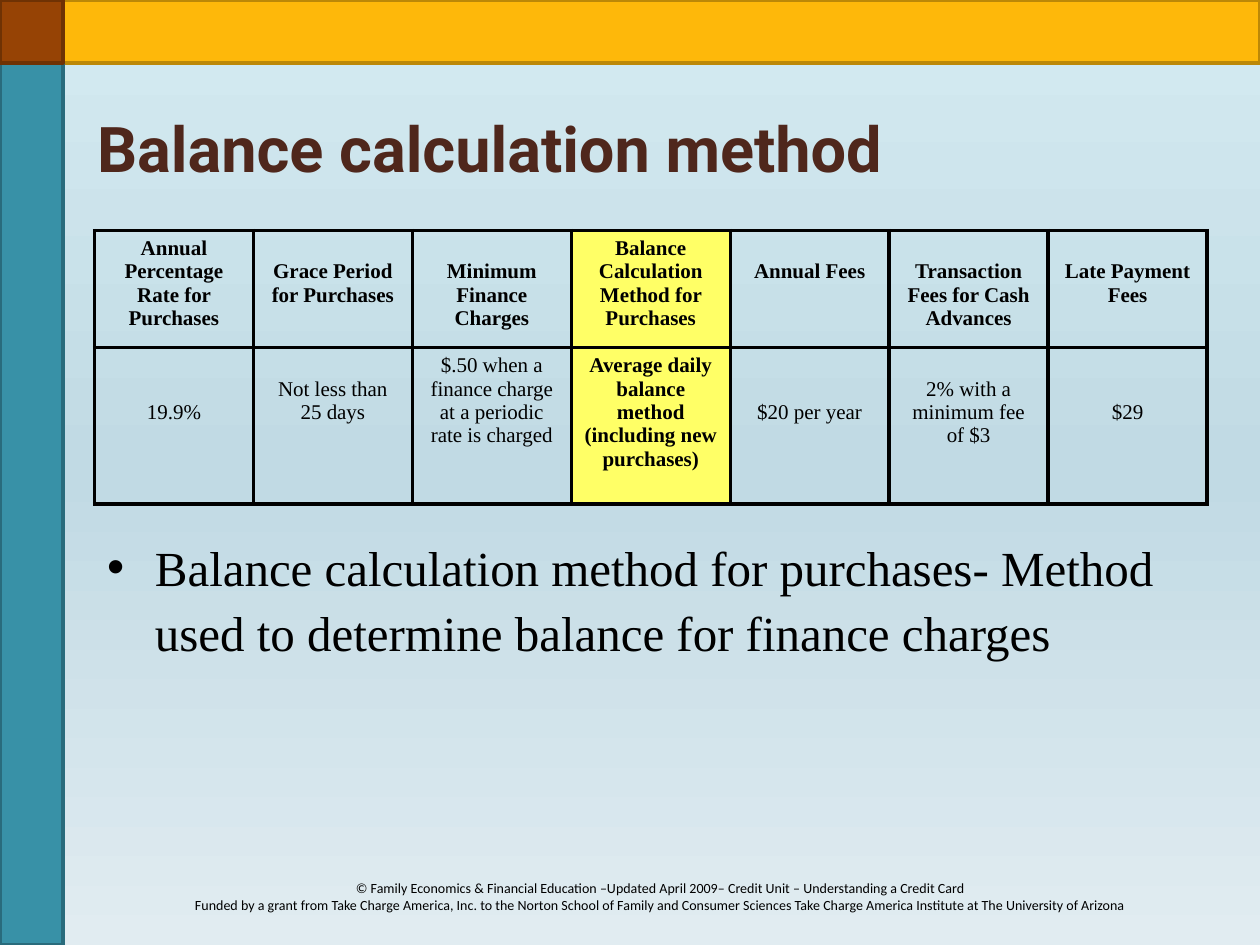
from copy import deepcopy

from lxml.etree import SubElement
from pptx import Presentation
from pptx.dml.color import RGBColor
from pptx.enum.shapes import MSO_SHAPE as Shape
from pptx.enum.text import MSO_ANCHOR as Anchor, PP_ALIGN as Align
from pptx.oxml.ns import qn
from pptx.util import Inches, Pt

BLACK = RGBColor(0x00, 0x00, 0x00)
BROWN = RGBColor(0x4F, 0x27, 0x1C)
YELLOW = RGBColor(0xFF, 0xFF, 0x66)
GOLD, GOLD_EDGE = RGBColor(0xFE, 0xB8, 0x0A), RGBColor(0xBC, 0x88, 0x07)
TEAL, TEAL_EDGE = RGBColor(0x38, 0x91, 0xA7), RGBColor(0x29, 0x6B, 0x7C)
RUST, RUST_EDGE = RGBColor(0x96, 0x43, 0x05), RGBColor(0x6F, 0x32, 0x04)
SKY = (RGBColor(0xD4, 0xEB, 0xF1), RGBColor(0xC1, 0xDA, 0xE4), RGBColor(0xE1, 0xEC, 0xF1))

WIDTH, HEIGHT, BAND = 10, 7.5, 0.5
LEFT, CONTENT_WIDTH = 0.75, 8.83
CELL_MARGIN, CELL_LINE = 0.05, 0.185
ROW_HEIGHTS = (0.93, 1.24)
HIGHLIGHT_COLUMN = 3
SERIF = "Times New Roman"

TERMS = (
    ((0, "Annual Percentage Rate for Purchases"), (2, "19.9%")),
    ((1, "Grace Period for Purchases"), (1, "Not less than\n25 days")),
    ((1, "Minimum Finance Charges"),
     (0, "$.50 when a finance charge at a periodic rate is charged")),
    ((0, "Balance Calculation Method for Purchases"),
     (0, "Average daily balance method (including new purchases)")),
    ((1, "Annual Fees"), (2, "$20 per year")),
    ((1, "Transaction Fees for Cash Advances"), (1, "2% with a minimum fee of $3")),
    ((1, "Late Payment Fees"), (2, "$29")),
)
CREDITS = (
    "© Family Economics & Financial Education –Updated April 2009– Credit Unit – "
    "Understanding a Credit Card\n"
    "Funded by a grant from Take Charge America, Inc. to the Norton School of Family and "
    "Consumer Sciences Take Charge America Institute at The University of Arizona"
)


def format_text(frame, font_name, size, color, align, bold=False):
    """Give every paragraph of a text frame the same look."""
    for para in frame.paragraphs:
        para.alignment = align
        font = para.font
        font.name, font.size, font.bold = font_name, Pt(size), bold
        font.color.rgb = color


def place(shape, left, top, width, height):
    """Move and size a shape in inches."""
    shape.left, shape.top = Inches(left), Inches(top)
    shape.width, shape.height = Inches(width), Inches(height)


def paint_background(page):
    """Fill the page with a vertical three-colour gradient."""
    fill = page.background.fill
    fill.gradient()
    fill.gradient_angle = 270
    stop_list = next(page.background._cSld.iter(qn("a:gsLst")))
    stop_list.append(deepcopy(stop_list[0]))
    for index, (stop, color) in enumerate(zip(fill.gradient_stops, SKY)):
        stop.position = index / 2
        stop.color.rgb = color


def add_band(page, width, height, color, edge):
    """Draw a bordered rectangle from the top left corner."""
    band = page.shapes.add_shape(Shape.RECTANGLE, 0, 0, Inches(width), Inches(height))
    band.shadow.inherit = False
    band.fill.solid()
    band.fill.fore_color.rgb = color
    band.line.color.rgb = edge
    band.line.width = Pt(2)


def add_title(page, text):
    """Fill the title placeholder."""
    title = page.shapes.title
    place(title, 0.67, 0.67, 8.92, 1)
    title.text_frame.text = text
    title.text_frame.vertical_anchor = Anchor.MIDDLE
    format_text(title.text_frame, "Roboto", 36, BROWN, Align.LEFT, bold=True)


def add_bullet(page, text):
    """Fill the body placeholder with one bulleted paragraph."""
    body = page.placeholders[1]
    place(body, LEFT, 4.17, CONTENT_WIDTH, 2.17)
    body.text_frame.text = text
    para = body.text_frame.paragraphs[0]
    para.space_before = Pt(0)
    para.line_spacing = 1.1
    settings = para._p.get_or_add_pPr()
    settings.set("marL", str(Inches(0.38)))
    settings.set("indent", str(-Inches(0.38)))
    SubElement(settings, qn("a:buChar")).set("char", "•")
    format_text(body.text_frame, SERIF, 28, BLACK, Align.LEFT)


def add_borders(cell):
    """Draw black lines on all four sides of a cell."""
    settings = cell._tc.get_or_add_tcPr()
    for side in ("a:lnL", "a:lnR", "a:lnT", "a:lnB"):
        line = SubElement(settings, qn(side), w=str(Pt(2.25)))
        fill = SubElement(line, qn("a:solidFill"))
        SubElement(fill, qn("a:srgbClr"), val=str(BLACK))


def fill_cell(cell, text, lines_above, bold, highlighted):
    """Write a cell, lowered by a number of text lines."""
    cell.text = text
    cell.margin_top = Inches(CELL_MARGIN + lines_above * CELL_LINE)
    format_text(cell.text_frame, SERIF, 12, BLACK, Align.CENTER, bold)
    add_borders(cell)
    if highlighted:
        cell.fill.solid()
        cell.fill.fore_color.rgb = YELLOW
    else:
        cell.fill.background()


def add_terms_table(page):
    """Build the table of credit card terms."""
    frame = page.shapes.add_table(
        len(ROW_HEIGHTS), len(TERMS), Inches(LEFT), Inches(1.83),
        Inches(CONTENT_WIDTH), Inches(sum(ROW_HEIGHTS)))
    table = frame.table
    table.horz_banding = False
    for row, height in zip(table.rows, ROW_HEIGHTS):
        row.height = Inches(height)
    for column, term in enumerate(TERMS):
        highlighted = column == HIGHLIGHT_COLUMN
        for row, (lines_above, text) in enumerate(term):
            fill_cell(table.cell(row, column), text, lines_above,
                      row == 0 or highlighted, highlighted)


def add_credits(page):
    """Write the centred credits at the foot of the page."""
    box = page.shapes.add_textbox(Inches(0.83), Inches(6.93), Inches(8.83), Inches(0.71))
    box.text_frame.word_wrap = True
    box.text_frame.text = CREDITS
    format_text(box.text_frame, "Calibri", 8, BLACK, Align.CENTER)


def main():
    """Build and save the deck."""
    deck = Presentation()
    deck.slide_width, deck.slide_height = Inches(WIDTH), Inches(HEIGHT)
    page = deck.slides.add_slide(deck.slide_layouts[1])
    paint_background(page)
    add_credits(page)
    add_band(page, WIDTH, BAND, GOLD, GOLD_EDGE)
    add_band(page, BAND, HEIGHT, TEAL, TEAL_EDGE)
    add_band(page, BAND, BAND, RUST, RUST_EDGE)
    add_title(page, "Balance calculation method")
    add_terms_table(page)
    add_bullet(page, "Balance calculation method for purchases- "
                     "Method used to determine balance for finance charges")
    deck.save("out.pptx")


if __name__ == "__main__":
    main()
